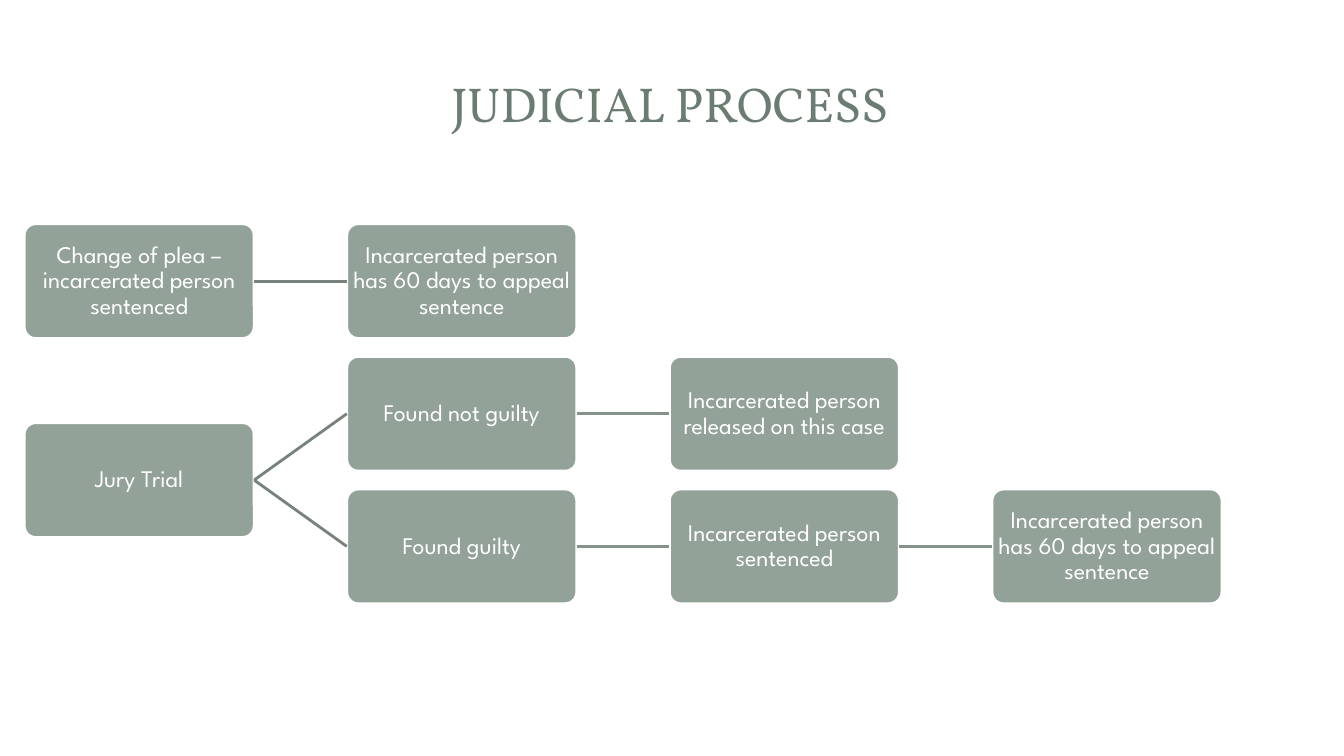
import pptx
import pptx.util
import pptx.dml.color
import pptx.enum.shapes
import pptx.enum.text
import pptx.oxml.ns
import lxml.etree

Inches = pptx.util.Inches
WIDE, HIGH = 13.33, 7.5
HUES = {"title": "6B7D72", "card": "93A299", "text": "FFFFFF",
        "first": "76827B", "later": "85938B"}
CARDS = {
    "plea": (0, 0, "Change of plea – incarcerated person sentenced"),
    "appeal": (1, 0, "Incarcerated person has 60 days to appeal sentence"),
    "trial": (0, 1.5, "Jury Trial"),
    "clear": (1, 1, "Found not guilty"),
    "free": (2, 1, "Incarcerated person released on this case"),
    "guilty": (1, 2, "Found guilty"),
    "jail": (2, 2, "Incarcerated person sentenced"),
    "final": (3, 2, "Incarcerated person has 60 days to appeal sentence"),
}
LINKS = [("plea", "appeal", "first"), ("trial", "clear", "first"),
         ("trial", "guilty", "first"), ("clear", "free", "later"),
         ("guilty", "jail", "later"), ("jail", "final", "later")]
FRAME = {"word_wrap": True, "vertical_anchor": pptx.enum.text.MSO_ANCHOR.MIDDLE}
TIGHT = {side: Inches(0.01) for side in
         ("margin_left", "margin_right", "margin_top", "margin_bottom")}


def apply(item, values):
    for name, value in values.items():
        setattr(item, name, value)


def color(name):
    return pptx.dml.color.RGBColor.from_string(HUES[name])


def write(shape, text, face, size, hue, frame, space):
    apply(shape.text_frame, frame)
    para = shape.text_frame.paragraphs[0]
    para.text = text
    apply(para, {"alignment": pptx.enum.text.PP_ALIGN.CENTER,
                 "line_spacing": space})
    font = para.runs[0].font
    apply(font, {"name": face, "size": pptx.util.Pt(size)})
    font.color.rgb = color(hue)


def stroke(shape, hue):
    shape.line.color.rgb = color(hue)
    shape.line.width = pptx.util.Pt(2)


def head(slide, box):
    shape = slide.shapes.add_textbox(*map(Inches, box))
    write(shape, "JUDICIAL PROCESS", "Vollkorn", 35, "title", FRAME, 1)


def card(slide, box, text):
    shape = slide.shapes.add_shape(
        pptx.enum.shapes.MSO_SHAPE.ROUNDED_RECTANGLE, *map(Inches, box))
    shape.adjustments[0] = 0.1
    shape.shadow.inherit = False
    shape.fill.solid()
    shape.fill.fore_color.rgb = color("card")
    stroke(shape, "text")
    write(shape, text, "League Spartan", 17, "text", {**FRAME, **TIGHT}, 0.9)
    return shape


def link(slide, start, end, hue):
    line = slide.shapes.add_connector(
        pptx.enum.shapes.MSO_CONNECTOR.STRAIGHT, 0, 0, 0, 0)
    line.begin_connect(start, 3)
    line.end_connect(end, 1)
    stroke(line, hue)
    lxml.etree.SubElement(line._element.spPr, pptx.oxml.ns.qn("a:effectLst"))


def chart(slide, box):
    left, top, width, height = box
    wide, high = width * 0.192, height * 0.302
    across, down = (width - wide) / 3, (height - high) / 2
    nodes = {}
    for name, (col, row, text) in CARDS.items():
        place = (left + col * across, top + row * down, wide, high)
        nodes[name] = card(slide, place, text)
    for start, end, hue in LINKS:
        link(slide, nodes[start], nodes[end], hue)


def main():
    deck = pptx.Presentation()
    apply(deck, {"slide_width": Inches(WIDE), "slide_height": Inches(HIGH)})
    slide = deck.slides.add_slide(deck.slide_layouts[6])
    head(slide, (0.62, 0.45, 12.05, 1.14))
    chart(slide, (0.24, 2.22, 11.88, 3.77))
    deck.save("out.pptx")


if __name__ == "__main__":
    main()
